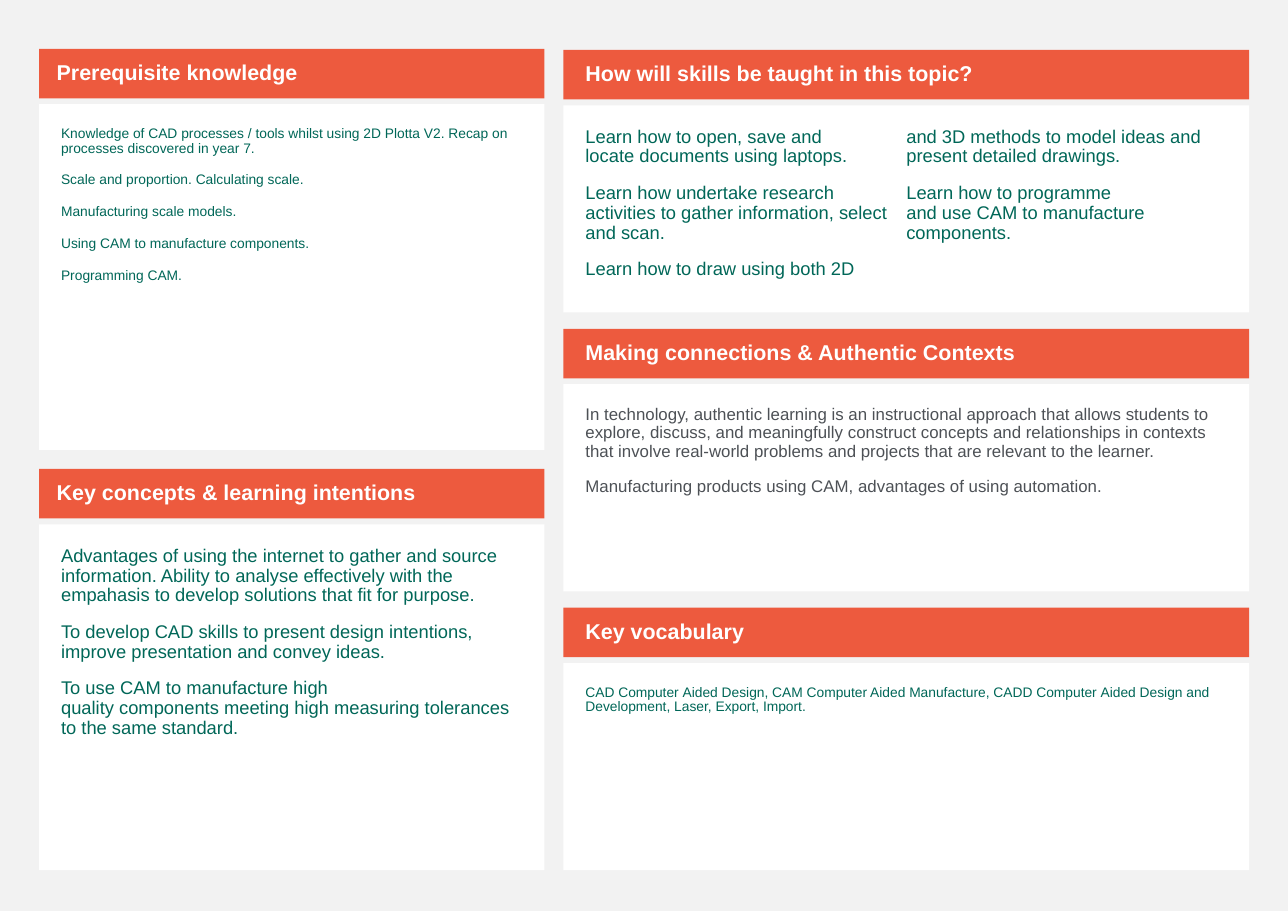
"""Build a one-page topic overview with five headed panels."""
from dataclasses import dataclass

from pptx import Presentation
from pptx.dml.color import RGBColor
from pptx.enum.shapes import MSO_SHAPE
from pptx.enum.text import MSO_ANCHOR as Anchor, PP_ALIGN as Align
from pptx.util import Pt

ORANGE, WHITE, GREY, GREEN, SLATE = "ED5A3E", "FFFFFF", "F2F2F2", "006758", "4D5156"
FONT = "Arial"
HEADING_HEIGHT = 32.4
BODY_OFFSET = 36.2
BODY_INSET = 14.4
TIE, HARD_SPACE = "~", chr(160)


@dataclass
class Column:
    left: float
    width: float
    top: float
    pitch: float
    body_height: float
    heading_inset: float


@dataclass
class Panel:
    column: Column
    row: int
    heading: str
    body: list[str]
    size: float
    color: str = GREEN
    text_columns: int = 1


LEFT = Column(25.5, 330.2, 31.9, 274.6, 226, 11.5)
RIGHT = Column(368.2, 448.2, 32.6, 182.3, 135.4, 14.4)

PANELS = [
    Panel(LEFT, 0, "Prerequisite knowledge", [
        "Knowledge of CAD processes / tools whilst using 2D Plotta V2. "
        "Recap~on processes~discovered~in year 7.",
        "Scale and proportion.~Calculating scale.",
        "Manufacturing scale models.",
        "Using~CAM to manufacture~components.",
        "Programming~CAM.",
    ], 9),
    Panel(LEFT, 1, "Key concepts & learning intentions", [
        "Advantages of using the internet to gather and source information. "
        "Ability~to~analyse effectively with the empahasis to develop "
        "solutions~that fit for purpose.",
        "To develop~CAD skills~to present design~intentions, improve "
        "presentation and convey ideas.",
        "To use~CAM to manufacture high quality~components~meeting high "
        "measuring~tolerances to the same~standard.",
    ], 12),
    Panel(RIGHT, 0, "How will skills be taught in this topic?", [
        "Learn how~to open, save and locate~documents using~laptops.",
        "Learn how~undertake~research activities~to gather~information, "
        "select and scan.",
        "Learn how~to~draw using~both 2D and~3D~methods~to model~ideas and "
        "present detailed~drawings.",
        "Learn how to~programme and~use~CAM to manufacture components.",
    ], 12, text_columns=2),
    Panel(RIGHT, 1, "Making connections & Authentic Contexts", [
        "In technology, authentic learning is an instructional approach that "
        "allows students to explore, discuss, and meaningfully construct "
        "concepts and relationships in contexts that involve real-world "
        "problems and projects that are relevant to the learner.",
        "Manufacturing~products using~CAM,~advantages~of using~automation.",
    ], 11, SLATE),
    Panel(RIGHT, 2, "Key vocabulary", [
        "CAD~Computer~Aided Design, CAM Computer Aided Manufacture, "
        "CADD~Computer~Aided Design~and Development,~Laser,~Export, Import.",
    ], 9),
]


def paint(fill, color: str) -> None:
    """Make a fill solid in a hex colour."""
    fill.solid()
    fill.fore_color.rgb = RGBColor.from_string(color)


def add_block(slide, column: Column, top: float, height: float, color: str):
    """Add a plain filled rectangle spanning a column."""
    block = slide.shapes.add_shape(
        MSO_SHAPE.RECTANGLE, Pt(column.left), Pt(top), Pt(column.width), Pt(height))
    block.shadow.inherit = False
    block.line.fill.background()
    paint(block.fill, color)
    return block


def write(block, lines: list[str], size: float, color: str, bold: bool,
          anchor: Anchor, insets: tuple[float, float, float, float]) -> None:
    """Fill a block with left-aligned paragraphs, turning ties into hard spaces."""
    frame = block.text_frame
    frame.word_wrap = True
    frame.vertical_anchor = anchor
    (frame.margin_left, frame.margin_top,
     frame.margin_right, frame.margin_bottom) = map(Pt, insets)
    frame.text = "\n".join(lines).replace(TIE, HARD_SPACE)
    for paragraph in frame.paragraphs:
        paragraph.alignment = Align.LEFT
        paragraph.line_spacing = 0.9
        paragraph.space_before = Pt(11)
        paragraph.font.name = FONT
        paragraph.font.size = Pt(size)
        paragraph.font.bold = bold
        paint(paragraph.font.fill, color)


def add_panel(slide, panel: Panel) -> None:
    """Add a panel's heading bar and the body beneath it."""
    column = panel.column
    top = column.top + panel.row * column.pitch
    heading = add_block(slide, column, top, HEADING_HEIGHT, ORANGE)
    write(heading, [panel.heading], 14, WHITE, True, Anchor.MIDDLE,
          (column.heading_inset, 3.6, 7.2, 3.6))
    body = add_block(slide, column, top + BODY_OFFSET, column.body_height, WHITE)
    write(body, panel.body, panel.size, panel.color, False, Anchor.TOP,
          (BODY_INSET,) * 4)
    if panel.text_columns > 1:
        body.element.txBody.bodyPr.set("numCol", str(panel.text_columns))


def main() -> None:
    """Draw every panel and save the presentation."""
    presentation = Presentation()
    presentation.slide_width, presentation.slide_height = Pt(841.68), Pt(595.44)
    slide = presentation.slides.add_slide(presentation.slide_layouts[6])
    paint(slide.background.fill, GREY)
    for panel in PANELS:
        add_panel(slide, panel)
    presentation.save("out.pptx")


if __name__ == "__main__":
    main()
